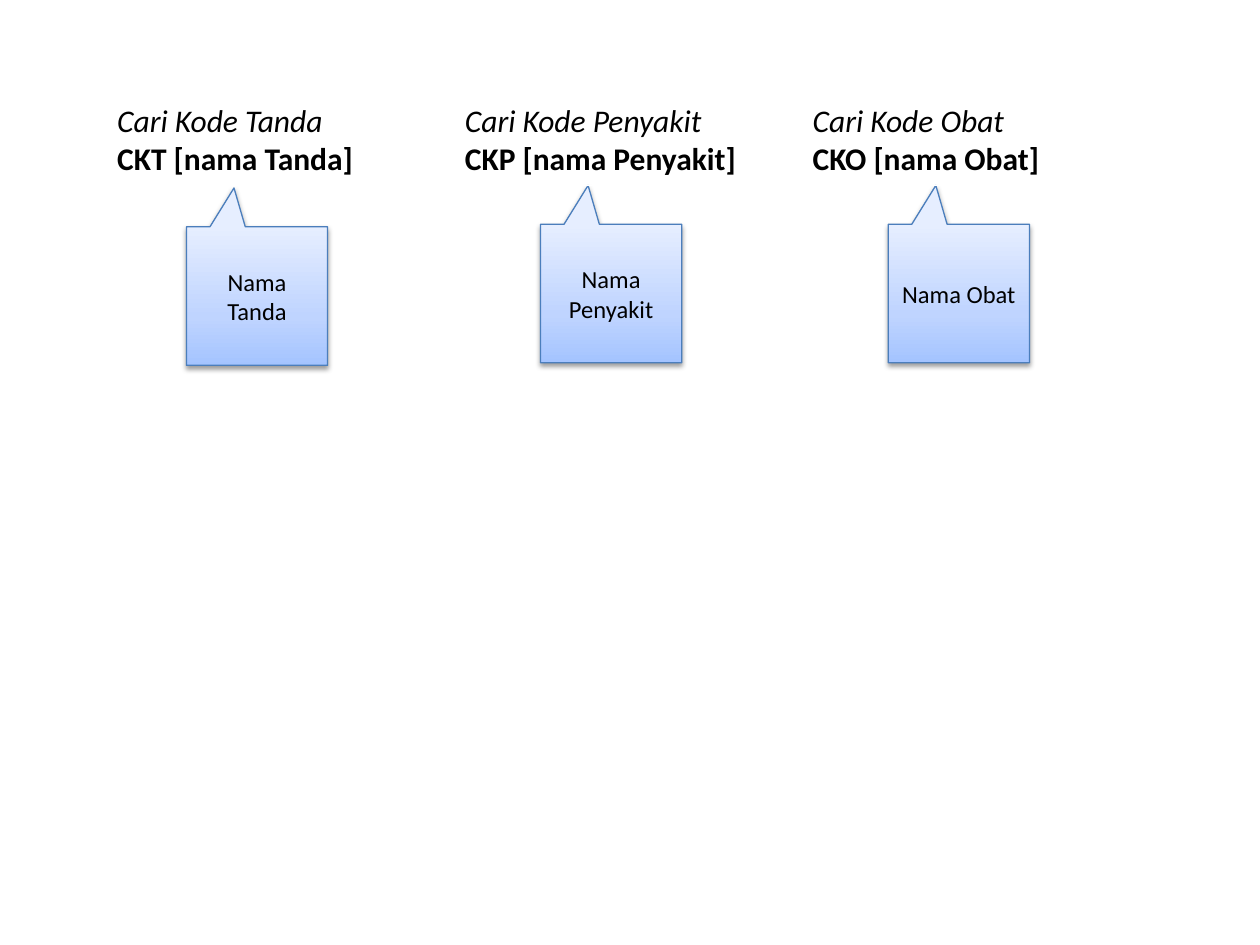
from copy import deepcopy

from lxml import etree
from pptx import Presentation
from pptx.dml.color import RGBColor
from pptx.enum import shapes, text
from pptx.oxml import ns
from pptx.util import Inches, Pt

FONT = "Calibri"
BLACK = "000000"
GRADIENT = [(0, "A4C4FF"), (0.35, "BFD4FF"), (1, "E6EEFF")]
COLUMN_WIDTH = 2.76

# Search title, command, callout label, callout left and top
CODES = [
    ("Cari Kode Tanda", "CKT [nama Tanda]", "Nama Tanda", 1.48, 1.8),
    ("Cari Kode Penyakit", "CKP [nama Penyakit]", "Nama Penyakit", 4.29, 1.78),
    ("Cari Kode Obat", "CKO [nama Obat]", "Nama Obat", 7.05, 1.78),
]


def color(hex_value):
    return RGBColor.from_string(hex_value)


def add_run(paragraph, words, size, bold=False, italic=False):
    run = paragraph.add_run()
    run.text = words
    font = run.font
    font.name, font.size = FONT, Pt(size)
    font.bold, font.italic = bold, italic
    font.color.rgb = color(BLACK)


def fill_gradient(fill):
    fill.gradient()
    fill.gradient_angle = 90
    stop_list = fill._xPr.find(".//" + ns.qn("a:gsLst"))
    stop_list.append(deepcopy(stop_list[-1]))
    for stop, (position, hex_value) in zip(fill.gradient_stops, GRADIENT):
        stop.position = position
        stop.color.rgb = color(hex_value)


def add_shadow(shape):
    shape.shadow.inherit = False
    effects = shape._element.spPr.find(ns.qn("a:effectLst"))
    shadow = etree.SubElement(
        effects, ns.qn("a:outerShdw"), blurRad=str(Pt(3.1)), dist=str(Pt(1.6)),
        dir="5400000", rotWithShape="0")
    tint = etree.SubElement(shadow, ns.qn("a:srgbClr"), val=BLACK)
    etree.SubElement(tint, ns.qn("a:alpha"), val="38000")


def add_callout(slide, label, left, top):
    callout = slide.shapes.add_shape(
        shapes.MSO_SHAPE.RECTANGULAR_CALLOUT,
        Inches(left), Inches(top), Inches(1.12), Inches(1.1))
    callout.adjustments[0] = -0.163
    callout.adjustments[1] = -0.78
    fill_gradient(callout.fill)
    callout.line.color.rgb = color("4B7EBC")
    callout.line.width = Pt(0.75)
    add_shadow(callout)
    frame = callout.text_frame
    frame.word_wrap = True
    frame.vertical_anchor = text.MSO_ANCHOR.MIDDLE
    paragraph = frame.paragraphs[0]
    paragraph.alignment = text.PP_ALIGN.CENTER
    add_run(paragraph, label, 14)


def add_code_table(slide):
    table = slide.shapes.add_table(
        1, len(CODES), Inches(0.83), Inches(0.76),
        Inches(COLUMN_WIDTH * len(CODES)), Inches(0.71)).table
    table.first_row = table.horz_banding = False
    for cell, (title, command, *_) in zip(table.rows[0].cells, CODES):
        cell.fill.background()
        frame = cell.text_frame
        add_run(frame.paragraphs[0], title, 18, italic=True)
        add_run(frame.add_paragraph(), command, 18, bold=True)


def main():
    deck = Presentation()
    deck.slide_width, deck.slide_height = Inches(10), Inches(7.5)
    slide = deck.slides.add_slide(deck.slide_layouts[6])

    # Callouts that explain each parameter
    for _, _, label, left, top in CODES:
        add_callout(slide, label, left, top)

    # Search commands
    add_code_table(slide)

    deck.save("out.pptx")


if __name__ == "__main__":
    main()
